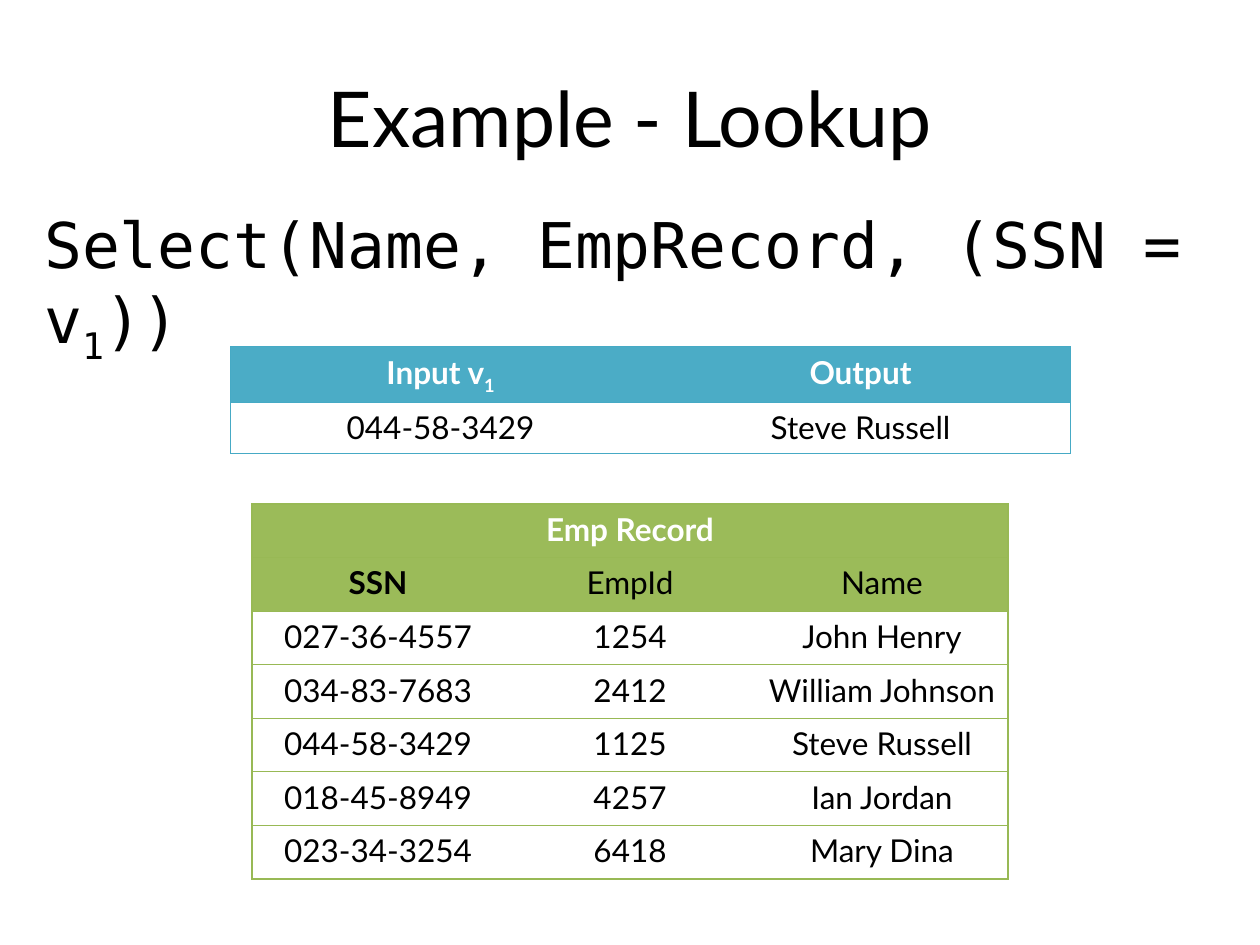
from pptx import Presentation
from pptx.dml.color import RGBColor
from pptx.enum.text import MSO_ANCHOR, PP_ALIGN
from pptx.oxml.ns import qn
from pptx.util import Cm, Pt
from lxml.etree import SubElement

BLACK = RGBColor(0x00, 0x00, 0x00)
WHITE = RGBColor(0xFF, 0xFF, 0xFF)
BLUE = RGBColor(0x4B, 0xAC, 0xC6)
BLUE_LINE = RGBColor(0x46, 0xAA, 0xC5)
GREEN = RGBColor(0x9B, 0xBB, 0x59)
GREEN_LINE = RGBColor(0x98, 0xB9, 0x55)


def write(para, text, face, size, color=BLACK, bold=False):
    for i, part in enumerate(text.split("_")):
        run = para.add_run()
        run.text = part
        run.font.name = face
        run.font.size = Pt(size)
        run.font.bold = bold
        run.font.color.rgb = color
        if i == 1:
            run._r.get_or_add_rPr().set("baseline", "-25000")


def edge(cell, side, color):
    line = SubElement(cell._tc.get_or_add_tcPr(), qn(f"a:ln{side}"), w=str(Pt(0.75)))
    if color is None:
        SubElement(line, qn("a:noFill"))
    else:
        fill = SubElement(line, qn("a:solidFill"))
        SubElement(fill, qn("a:srgbClr"), val=str(color))


deck = Presentation()
deck.slide_width, deck.slide_height = Cm(25.4), Cm(19.05)
slide = deck.slides.add_slide(deck.slide_layouts[5])

title = slide.shapes.title
title.left, title.top, title.width, title.height = Cm(1.27), Cm(0.76), Cm(22.86), Cm(3.18)
title.text_frame.vertical_anchor = MSO_ANCHOR.MIDDLE
head = title.text_frame.paragraphs[0]
head.alignment = PP_ALIGN.CENTER
write(head, "Example - Lookup", "Lato", 44)

records = [
    ["Emp Record", "", ""],
    ["SSN", "EmpId", "Name"],
    ["027-36-4557", "1254", "John Henry"],
    ["034-83-7683", "2412", "William Johnson"],
    ["044-58-3429", "1125", "Steve Russell"],
    ["018-45-8949", "4257", "Ian Jordan"],
    ["023-34-3254", "6418", "Mary Dina"],
]
lookup = [["Input v_1", "Output"], ["044-58-3429", "Steve Russell"]]

tables = [
    (records, 5.08, 10.16, 15.24, 1.08, 2, GREEN, GREEN_LINE),
    (lookup, 4.65, 6.99, 16.93, 1.03, 1, BLUE, BLUE_LINE),
]
for rows, left, top, width, height, heads, color, border in tables:
    count = len(rows[0])
    frame = slide.shapes.add_table(
        len(rows), count, Cm(left), Cm(top), Cm(width), Cm(height * len(rows)))
    table = frame.table
    table.first_row = table.horz_banding = False
    if rows is records:
        table.cell(0, 0).merge(table.cell(0, count - 1))
    for r, row in enumerate(rows):
        table.rows[r].height = Cm(height)
        for c, text in enumerate(row):
            cell = table.cell(r, c)
            edge(cell, "L", border if c == 0 else None)
            edge(cell, "R", border if c + cell.span_width == count else None)
            edge(cell, "T", border)
            edge(cell, "B", border)
            if r < heads:
                cell.fill.solid()
                cell.fill.fore_color.rgb = color
            else:
                cell.fill.background()
            if text:
                para = cell.text_frame.paragraphs[0]
                para.alignment = PP_ALIGN.CENTER
                write(para, text, "Lato", 18, WHITE if r == 0 else BLACK,
                      r == 0 or text == "SSN")

box = slide.shapes.add_textbox(Cm(0.64), Cm(4.01), Cm(26.04), Cm(1.8))
box.text_frame.word_wrap = True
write(box.text_frame.paragraphs[0], "Select(Name, EmpRecord, (SSN = v_1_))",
      "DejaVu Sans Mono", 36)

deck.save("out.pptx")
